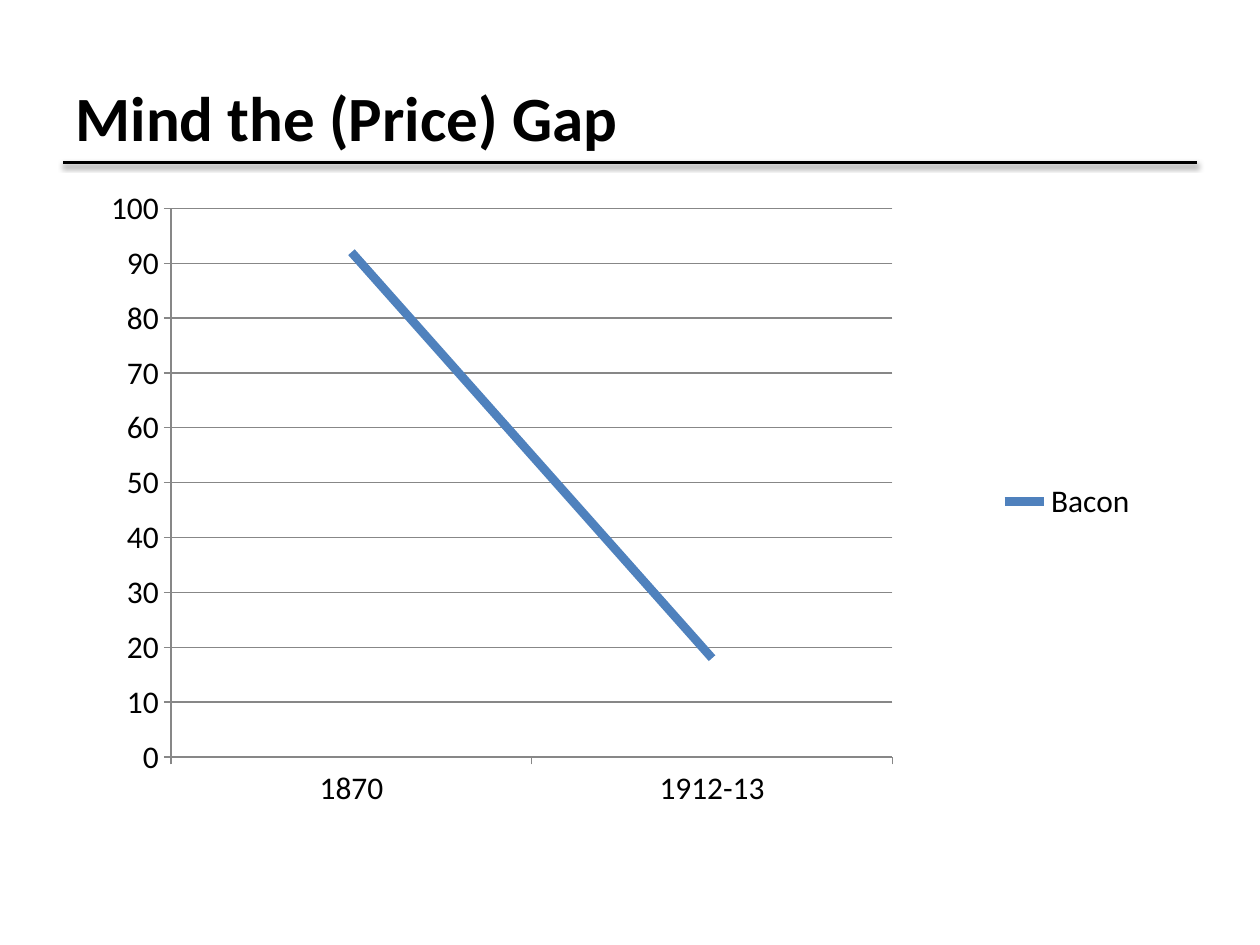
from lxml import etree
from pptx import Presentation
from pptx.chart.data import CategoryChartData
from pptx.dml.color import RGBColor
from pptx.enum.chart import XL_CHART_TYPE as ChartType, XL_LEGEND_POSITION as LegendPosition
from pptx.enum.chart import XL_MARKER_STYLE as MarkerStyle, XL_TICK_MARK as TickMark
from pptx.enum.shapes import MSO_CONNECTOR as Connector
from pptx.enum.text import MSO_ANCHOR as Anchor, PP_ALIGN as Align
from pptx.oxml import parse_xml
from pptx.oxml.ns import nsdecls, qn
from pptx.util import Pt

FONT = "Calibri"
BLACK = "000000"
AXIS_GREY = "878787"
BACON_BLUE = "4F81BD"


def color(hex_value):
    return RGBColor.from_string(hex_value)


def format_font(font, size, bold=False):
    font.name = FONT
    font.size = Pt(size)
    font.bold = bold
    font.color.rgb = color(BLACK)


def format_line(line, hex_value, width):
    line.color.rgb = color(hex_value)
    line.width = Pt(width)


def add_title(slide, text):
    title = slide.shapes.title
    title.left, title.top, title.width, title.height = Pt(36), Pt(21.6), Pt(648), Pt(90)
    frame = title.text_frame
    frame.text = text
    frame.vertical_anchor = Anchor.MIDDLE
    heading = frame.paragraphs[0]
    heading.alignment = Align.LEFT
    format_font(heading.runs[0].font, 36, bold=True)


def add_title_rule(slide):
    rule = slide.shapes.add_connector(Connector.STRAIGHT, Pt(36), Pt(92.9), Pt(684), Pt(92.9))
    format_line(rule.line, BLACK, 2)
    rule._element.spPr.append(parse_xml(
        f'<a:effectLst {nsdecls("a")}>'
        f'<a:outerShdw blurRad="{Pt(3.1)}" dist="{Pt(1.6)}" dir="5400000" rotWithShape="0">'
        f'<a:srgbClr val="{BLACK}"><a:alpha val="38000"/></a:srgbClr>'
        '</a:outerShdw></a:effectLst>'))


def place_plot(chart, x, y, w, h):
    plot_area = chart._chartSpace.chart.plotArea
    for old_layout in plot_area.findall(qn("c:layout")):
        plot_area.remove(old_layout)
    layout = etree.Element(qn("c:layout"))
    manual = etree.SubElement(layout, qn("c:manualLayout"))
    settings = {"layoutTarget": "inner", "xMode": "edge", "yMode": "edge",
                "x": x, "y": y, "w": w, "h": h}
    for tag, value in settings.items():
        etree.SubElement(manual, qn(f"c:{tag}")).set("val", str(value))
    plot_area.insert(0, layout)


def add_price_chart(slide):
    prices = CategoryChartData()
    prices.categories = ["1870", "1912-13"]
    prices.add_series("Bacon", [92, 18])
    chart = slide.shapes.add_chart(
        ChartType.LINE, Pt(63.4), Pt(108), Pt(594), Pt(357.1), prices).chart
    format_font(chart.font, 18)
    chart.has_title = False
    chart.has_legend = True
    chart.legend.position = LegendPosition.RIGHT
    chart.legend.include_in_layout = False

    for axis in (chart.category_axis, chart.value_axis):
        axis.major_tick_mark = TickMark.OUTSIDE
        axis.minor_tick_mark = TickMark.NONE
        format_line(axis.format.line, AXIS_GREY, 0.75)
    price_axis = chart.value_axis
    price_axis.minimum_scale, price_axis.maximum_scale = 0, 100
    price_axis.major_unit = 10
    price_axis.has_major_gridlines = True
    format_line(price_axis.major_gridlines.format.line, AXIS_GREY, 0.75)

    plot = chart.plots[0]
    plot.vary_by_categories = False
    bacon = plot.series[0]
    bacon.smooth = False
    bacon.marker.style = MarkerStyle.NONE
    format_line(bacon.format.line, BACON_BLUE, 5)
    place_plot(chart, 0.055, 0.031, 0.696, 0.878)


def main():
    deck = Presentation()
    deck.slide_width, deck.slide_height = Pt(720), Pt(540)
    slide = deck.slides.add_slide(deck.slide_layouts[5])
    add_title_rule(slide)
    add_title(slide, "Mind the (Price) Gap")
    add_price_chart(slide)
    deck.save("out.pptx")


if __name__ == "__main__":
    main()
